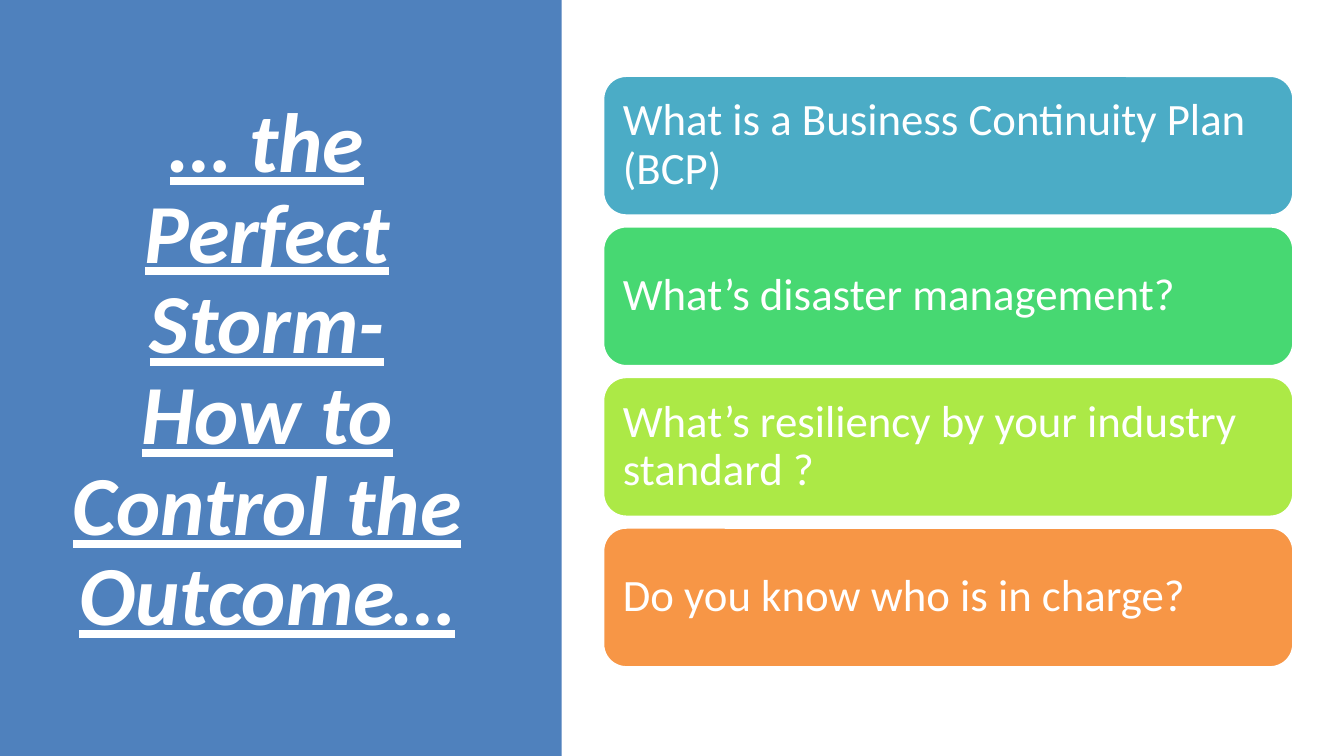
from dataclasses import dataclass

from pptx import Presentation
from pptx.dml.color import RGBColor
from pptx.enum.shapes import MSO_SHAPE
from pptx.enum.text import MSO_ANCHOR, MSO_AUTO_SIZE, PP_ALIGN
from pptx.shapes.autoshape import Shape
from pptx.slide import Slide
from pptx.text.text import TextFrame
from pptx.util import Inches, Pt

RECTANGLE, ROUNDED = MSO_SHAPE.RECTANGLE, MSO_SHAPE.ROUNDED_RECTANGLE
MIDDLE = MSO_ANCHOR.MIDDLE
SHRINK = MSO_AUTO_SIZE.TEXT_TO_FIT_SHAPE
LEFT, CENTER = PP_ALIGN.LEFT, PP_ALIGN.CENTER

FONT = "Calibri"
COLORS = {
    "white": "FFFFFF",
    "blue": "4F81BD",
    "teal": "4BACC6",
    "green": "47D872",
    "lime": "ACE946",
    "orange": "F79646",
}

HEADLINE = "… the Perfect Storm- How to Control the Outcome…"
CARD_LEFT, CARD_TOP = 5.98, 0.75
CARD_WIDTH, CARD_HEIGHT = 6.85, 1.39
CARD_PITCH = 1.494
CARD_INSET = 0.13


@dataclass(frozen=True)
class Question:
    text: str
    color: str


QUESTIONS = [
    Question("What is a Business Continuity Plan (BCP)", "teal"),
    Question("What’s disaster management?", "green"),
    Question("What’s resiliency by your industry standard ?", "lime"),
    Question("Do you know who is in charge?", "orange"),
]


def rgb(name: str) -> RGBColor:
    return RGBColor.from_string(COLORS[name])


def add_block(slide: Slide, kind: MSO_SHAPE, left: float, top: float,
              width: float, height: float, color: str) -> Shape:
    block = slide.shapes.add_shape(
        kind, Inches(left), Inches(top), Inches(width), Inches(height))
    block.shadow.inherit = False
    block.fill.solid()
    block.fill.fore_color.rgb = rgb(color)
    block.line.fill.background()
    return block


def write(frame: TextFrame, text: str, size: int, align: PP_ALIGN,
          emphasis: bool = False) -> None:
    frame.word_wrap = True
    frame.vertical_anchor = MIDDLE
    frame.text = text
    paragraph = frame.paragraphs[0]
    paragraph.alignment = align
    paragraph.line_spacing = 0.9
    for run in paragraph.runs:
        run.font.name = FONT
        run.font.size = Pt(size)
        run.font.color.rgb = rgb("white")
        run.font.bold = run.font.italic = run.font.underline = emphasis


def add_question(slide: Slide, question: Question, top: float) -> None:
    card = add_block(slide, ROUNDED, CARD_LEFT, top,
                     CARD_WIDTH, CARD_HEIGHT, question.color)
    card.line.color.rgb = rgb("white")
    card.line.width = Pt(2)
    frame = card.text_frame
    frame.margin_left = frame.margin_right = Inches(CARD_INSET)
    frame.margin_top = frame.margin_bottom = Inches(CARD_INSET)
    write(frame, question.text, 32, LEFT)


def main() -> None:
    deck = Presentation()
    deck.slide_width, deck.slide_height = Inches(13.33), Inches(7.5)
    slide = deck.slides.add_slide(deck.slide_layouts[6])

    # Headline panel
    add_block(slide, RECTANGLE, 0, 0, 5.57, 7.5, "blue")
    headline = slide.shapes.add_textbox(
        Inches(0.57), Inches(0.68), Inches(4.16), Inches(6.02))
    write(headline.text_frame, HEADLINE, 60, CENTER, emphasis=True)
    headline.text_frame.auto_size = SHRINK

    # Question cards
    for index, question in enumerate(QUESTIONS):
        add_question(slide, question, CARD_TOP + index * CARD_PITCH)

    deck.save("out.pptx")


if __name__ == "__main__":
    main()
